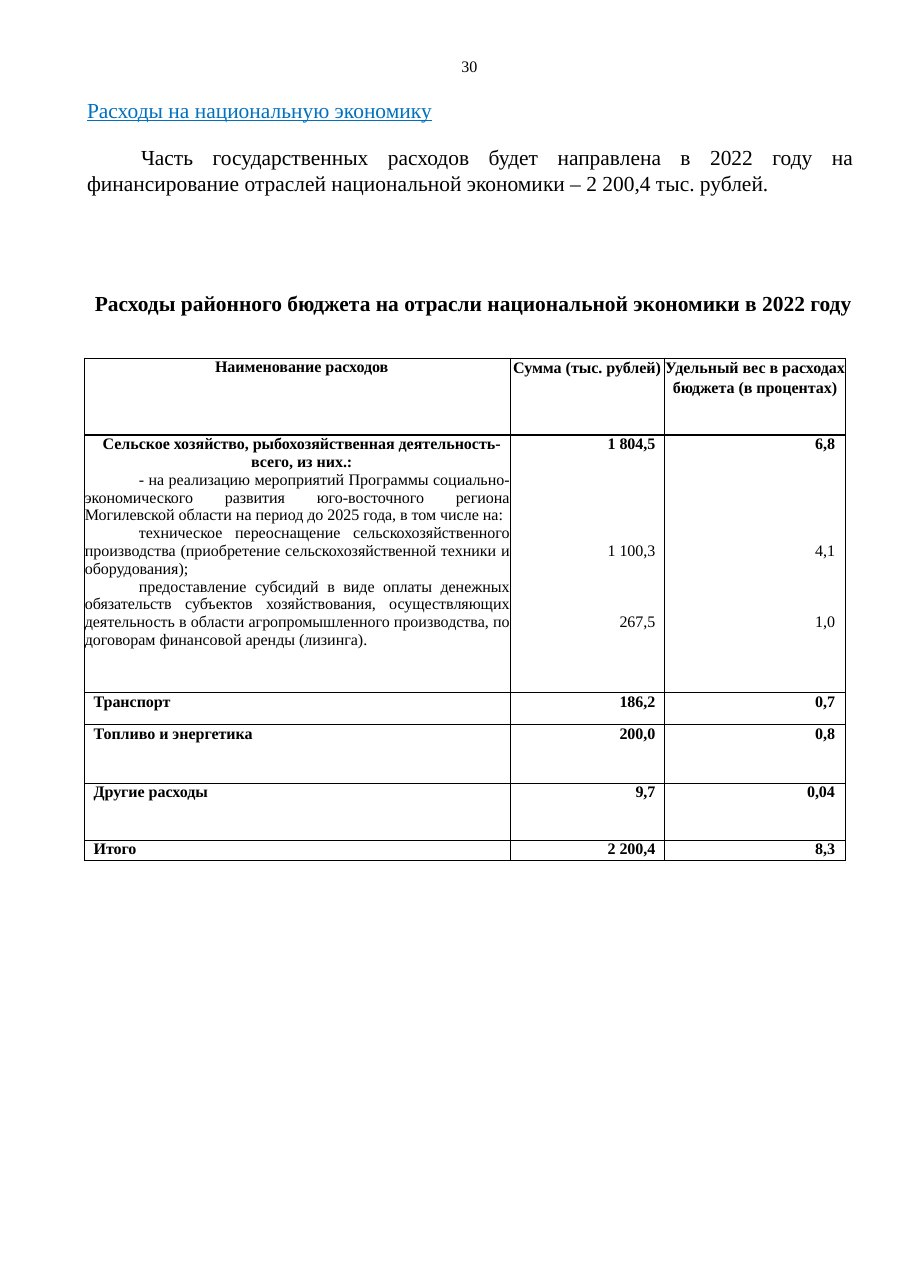
import dataclasses

import pptx
import pptx.dml.color
import pptx.enum.text
import pptx.oxml
import pptx.oxml.ns
import pptx.util

Pt = pptx.util.Pt
Inches = pptx.util.Inches
Align = pptx.enum.text.PP_ALIGN

# Content
PAGE_NUMBER = "30"
HEADING = "Расходы на национальную экономику"
INTRODUCTION = ("Часть государственных расходов будет направлена в 2022 году на "
                "финансирование отраслей национальной экономики – 2 200,4 тыс. рублей.")
TABLE_TITLE = "Расходы районного бюджета на отрасли национальной экономики в 2022 году"
HEADERS = ("Наименование расходов", "Сумма (тыс. рублей)",
           "Удельный вес в расходах бюджета (в процентах)")
AGRICULTURE = "Сельское хозяйство, рыбохозяйственная деятельность-всего, из них.:"
AGRICULTURE_PARTS = (
    "- на реализацию мероприятий Программы социально-экономического развития "
    "юго-восточного региона Могилевской области на период до 2025 года, в том числе на:",
    "техническое переоснащение сельскохозяйственного производства "
    "(приобретение сельскохозяйственной техники и оборудования);",
    "предоставление субсидий в виде оплаты денежных обязательств субъектов "
    "хозяйствования, осуществляющих деятельность в области агропромышленного "
    "производства, по договорам финансовой аренды (лизинга).",
)
AGRICULTURE_FIGURES = (("1 804,5", "1 100,3", "267,5"), ("6,8", "4,1", "1,0"))
LINES_BETWEEN_FIGURES = (0, 5, 3)
OTHER_ROWS = (
    ("Транспорт", "186,2", "0,7"),
    ("Топливо и энергетика", "200,0", "0,8"),
    ("Другие расходы", "9,7", "0,04"),
    ("Итого", "2 200,4", "8,3"),
)


@dataclasses.dataclass(frozen=True)
class Theme:
    font: str = "Times New Roman"
    text: str = "000000"
    heading: str = "0070C0"
    large: float = 14
    small: float = 10.5
    small_line: float = 11.63
    border: float = 0.75
    header_border: float = 1.5


THEME = Theme()

# Layout in inches
PAGE_WIDTH, PAGE_HEIGHT = 8.27, 11.69
LEFT, TEXT_WIDTH = 0.77, 7.01
INDENT, FIRST_LINE = 0.08, 0.49
COLUMN_WIDTHS = (3.86, 1.4, 1.65)
ROW_HEIGHTS = (0.7, 2.34, 0.29, 0.53, 0.52, 0.18)
FIGURE_MARGINS = (0.08, 0.1)
TABLE_TOP = 3.25


def add_text(frame, text, size=THEME.small, color=THEME.text, bold=False, underline=False,
             align=Align.LEFT, left=0, first=0, line=None, before=0, after=0):
    """Fill the first empty paragraph of the frame, or append a new one."""
    paragraph = frame.paragraphs[0] if not frame.text else frame.add_paragraph()
    paragraph.alignment = align
    paragraph.line_spacing = Pt(line) if line else 1.0
    paragraph.space_before, paragraph.space_after = Pt(before), Pt(after)
    properties = paragraph._p.get_or_add_pPr()
    properties.set("marL", str(Inches(left)))
    properties.set("indent", str(Inches(first)))
    properties.append(pptx.oxml.parse_xml(
        f"<a:buNone {pptx.oxml.ns.nsdecls('a')}/>"))
    run = paragraph.add_run()
    run.text = text
    font = run.font
    font.name, font.size, font.bold, font.underline = THEME.font, Pt(size), bold, underline
    font.color.rgb = pptx.dml.color.RGBColor.from_string(color)


def prepare(shape, left, top, width, height, wrap=True):
    shape.left, shape.top, shape.width, shape.height = map(Inches, (left, top, width, height))
    frame = shape.text_frame
    frame.margin_left = frame.margin_top = frame.margin_right = frame.margin_bottom = 0
    frame.word_wrap = wrap
    frame.auto_size = pptx.enum.text.MSO_AUTO_SIZE.NONE
    frame.vertical_anchor = pptx.enum.text.MSO_ANCHOR.TOP
    return frame


def set_borders(cell, top, bottom):
    properties = cell._tc.get_or_add_tcPr()
    widths = {"lnL": THEME.border, "lnR": THEME.border, "lnT": top, "lnB": bottom}
    for index, (side, width) in enumerate(widths.items()):
        properties.insert(index, pptx.oxml.parse_xml(
            f"<a:{side} {pptx.oxml.ns.nsdecls('a')} w='{Pt(width)}'><a:solidFill>"
            f"<a:srgbClr val='{THEME.text}'/></a:solidFill></a:{side}>"))


presentation = pptx.Presentation()
presentation.slide_width, presentation.slide_height = Inches(PAGE_WIDTH), Inches(PAGE_HEIGHT)
slide = presentation.slides.add_slide(presentation.slide_layouts[1])

# Heading, introduction and table title
title, body = slide.placeholders
add_text(prepare(title, LEFT, 0.88, TEXT_WIDTH, 0.3), HEADING, size=THEME.large,
         color=THEME.heading, underline=True, align=Align.JUSTIFY, left=0.02)
frame = prepare(body, LEFT, 1.3, TEXT_WIDTH, 1.87)
frame.margin_right = Inches(0.03)
add_text(frame, INTRODUCTION, size=THEME.large, align=Align.JUSTIFY,
         left=0.02, first=FIRST_LINE, line=17.3, after=6.3)
add_text(frame, TABLE_TITLE, size=THEME.large, bold=True, align=Align.CENTER,
         left=INDENT, line=17, before=55)

# Page number
number = slide.shapes.add_textbox(0, 0, 0, 0)
add_text(prepare(number, 4.18, 0.51, 0.2, 0.15, wrap=False), PAGE_NUMBER, left=0.01)

# Table grid
table = slide.shapes.add_table(
    len(ROW_HEIGHTS), len(COLUMN_WIDTHS), Inches(LEFT), Inches(TABLE_TOP),
    Inches(sum(COLUMN_WIDTHS)), Inches(sum(ROW_HEIGHTS))).table
table.first_row = table.horz_banding = False
for column, width in zip(table.columns, COLUMN_WIDTHS):
    column.width = Inches(width)
for row_index, (row, height) in enumerate(zip(table.rows, ROW_HEIGHTS)):
    row.height = Inches(height)
    for column_index, cell in enumerate(row.cells):
        cell.margin_left = cell.margin_top = cell.margin_right = cell.margin_bottom = 0
        if row_index and column_index:
            cell.margin_right = Inches(FIGURE_MARGINS[column_index - 1])
        cell.fill.background()
        set_borders(cell, THEME.header_border if row_index == 1 else THEME.border,
                    THEME.header_border if row_index == 0 else THEME.border)

# Header row
for column_index, (header, line) in enumerate(zip(HEADERS, (None, 12.5, 12.7))):
    add_text(table.cell(0, column_index).text_frame, header, bold=True, align=Align.CENTER,
             left=0 if column_index else INDENT, line=line)

# Agriculture row
frame = table.cell(1, 0).text_frame
add_text(frame, AGRICULTURE, bold=True, align=Align.CENTER, left=INDENT)
for part in AGRICULTURE_PARTS:
    add_text(frame, part, align=Align.JUSTIFY, first=FIRST_LINE)
for column_index, figures in enumerate(AGRICULTURE_FIGURES, 1):
    for figure, gap in zip(figures, LINES_BETWEEN_FIGURES):
        add_text(table.cell(1, column_index).text_frame, figure, bold=gap == 0,
                 align=Align.RIGHT, before=gap * THEME.small_line)

# Other rows
for row_index, values in enumerate(OTHER_ROWS, 2):
    for column_index, value in enumerate(values):
        add_text(table.cell(row_index, column_index).text_frame, value, bold=True,
                 align=Align.RIGHT if column_index else Align.LEFT,
                 left=0 if column_index else INDENT)

presentation.save("out.pptx")
